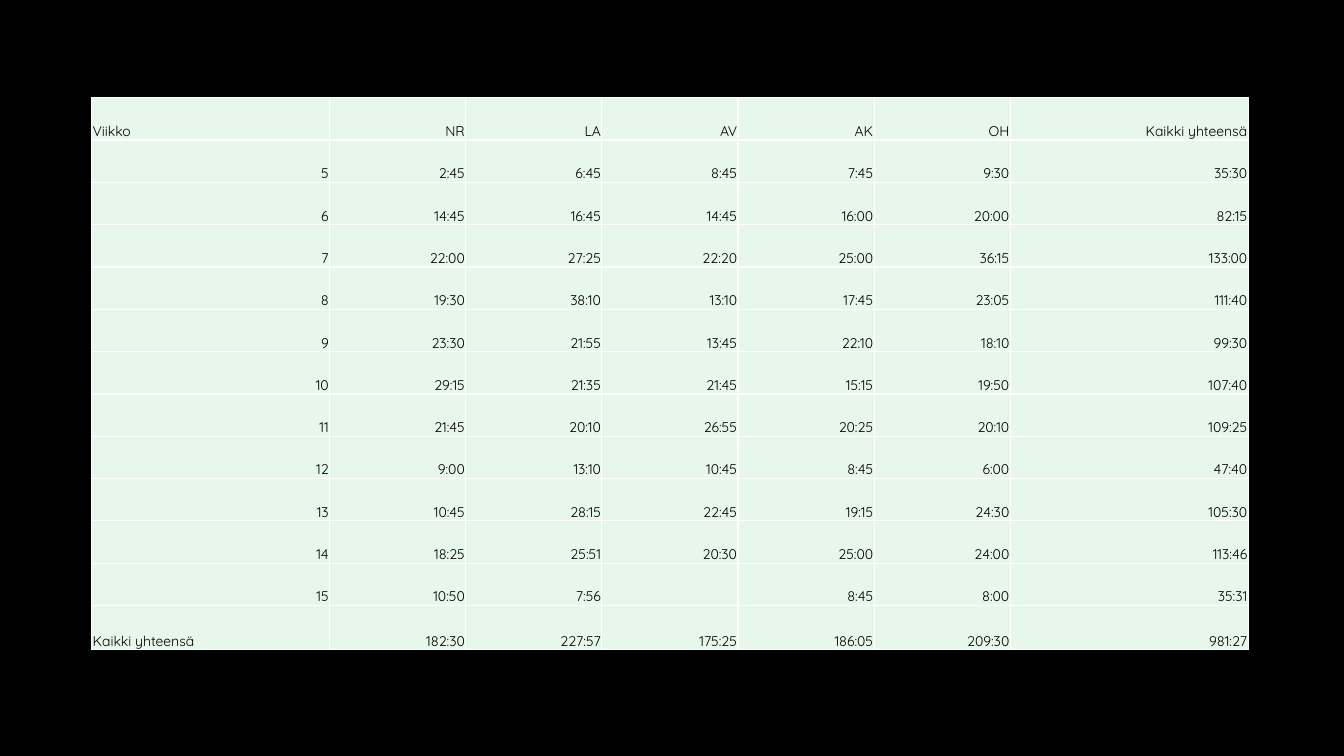
from lxml.etree import SubElement
from pptx import Presentation
from pptx.dml.color import RGBColor
from pptx.enum.text import MSO_ANCHOR, PP_ALIGN
from pptx.oxml.ns import qn
from pptx.util import Inches, Pt

HUES = {"back": "000000", "ink": "000000", "mint": "E7F7EC", "rule": "FFFFFF"}
WIDE = [2.36] + [1.35] * 5 + [2.36]
HOURS = [
    ["Viikko", "NR", "LA", "AV", "AK", "OH", "Kaikki yhteensä"],
    ["5", "2:45", "6:45", "8:45", "7:45", "9:30", "35:30"],
    ["6", "14:45", "16:45", "14:45", "16:00", "20:00", "82:15"],
    ["7", "22:00", "27:25", "22:20", "25:00", "36:15", "133:00"],
    ["8", "19:30", "38:10", "13:10", "17:45", "23:05", "111:40"],
    ["9", "23:30", "21:55", "13:45", "22:10", "18:10", "99:30"],
    ["10", "29:15", "21:35", "21:45", "15:15", "19:50", "107:40"],
    ["11", "21:45", "20:10", "26:55", "20:25", "20:10", "109:25"],
    ["12", "9:00", "13:10", "10:45", "8:45", "6:00", "47:40"],
    ["13", "10:45", "28:15", "22:45", "19:15", "24:30", "105:30"],
    ["14", "18:25", "25:51", "20:30", "25:00", "24:00", "113:46"],
    ["15", "10:50", "7:56", "", "8:45", "8:00", "35:31"],
    ["Kaikki yhteensä", "182:30", "227:57", "175:25", "186:05", "209:30", "981:27"],
]
HIGH = [0.42] * (len(HOURS) - 1) + [0.44]


class Deck:
    def __init__(self, font, size):
        self.font, self.size = font, Pt(size)
        self.show = Presentation()
        self.show.slide_width = Inches(13.33)
        self.show.slide_height = Inches(7.5)
        self.slide = self.show.slides.add_slide(self.show.slide_layouts[6])
        self.paint(self.slide.background.fill, "back")

    def paint(self, fill, hue):
        fill.solid()
        fill.fore_color.rgb = RGBColor.from_string(HUES[hue])

    def style(self, font):
        font.name, font.size = self.font, self.size
        font.color.rgb = RGBColor.from_string(HUES["ink"])

    def border(self, cell):
        props = cell._tc.get_or_add_tcPr()
        for side in ("a:lnL", "a:lnR", "a:lnT", "a:lnB"):
            line = SubElement(props, qn(side), w=str(Pt(1)))
            fill = SubElement(line, qn("a:solidFill"))
            SubElement(fill, qn("a:srgbClr"), val=HUES["rule"])

    def cell(self, cell, text, align):
        self.border(cell)
        self.paint(cell.fill, "mint")
        cell.margin_left = cell.margin_right = cell.margin_top = Inches(0.01)
        cell.margin_bottom = 0
        cell.vertical_anchor = MSO_ANCHOR.BOTTOM
        para = cell.text_frame.paragraphs[0]
        para.alignment = align
        if text:
            run = para.add_run()
            run.text = text
            self.style(run.font)

    def table(self, left, top, wide, high, data):
        frame = self.slide.shapes.add_table(
            len(high), len(wide), Inches(left), Inches(top),
            Inches(sum(wide)), Inches(sum(high)))
        grid = frame.table
        grid.first_row = grid.horz_banding = False
        for col, width in zip(grid.columns, wide):
            col.width = Inches(width)
        for row, height, texts in zip(grid.rows, high, data):
            row.height = Inches(height)
            for num, (cell, text) in enumerate(zip(row.cells, texts)):
                label = num == 0 and not text.isdigit()
                self.cell(cell, text, PP_ALIGN.LEFT if label else PP_ALIGN.RIGHT)


def main():
    deck = Deck("Quicksand", 10)
    deck.table(0.91, 0.97, WIDE, HIGH, HOURS)
    deck.show.save("out.pptx")


if __name__ == "__main__":
    main()
